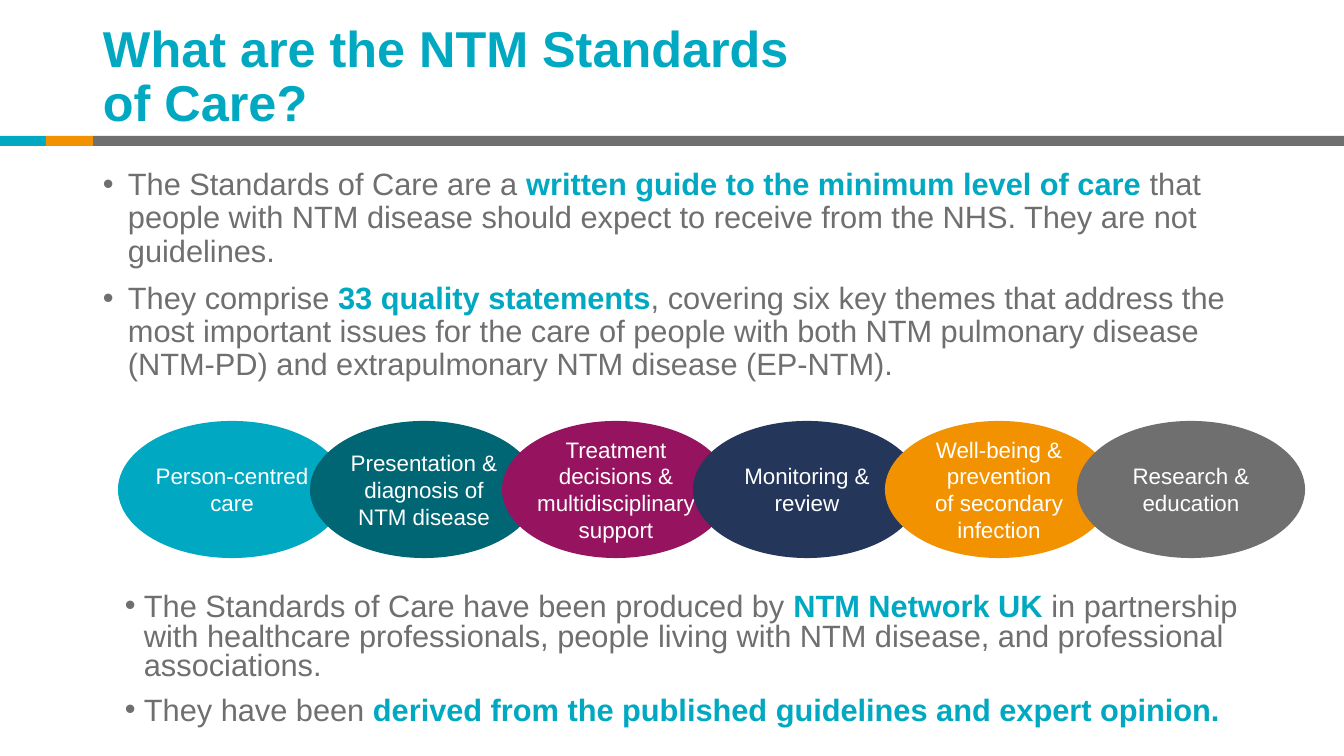
from lxml import etree
from pptx import Presentation
from pptx import util as u
from pptx.dml.color import RGBColor
from pptx.enum import shapes, text
from pptx.oxml.ns import qn

PX = 914400 / 100.8
COLORS = {
    "teal": "00A9C1", "deep": "006674", "plum": "96145F", "navy": "24375B",
    "orange": "F39200", "grey": "706F6F", "white": "FFFFFF",
}


def px(*lengths):
    return [u.Emu(round(n * PX)) for n in lengths]


def write(tf, paragraphs, size, color, bold=False, align=text.PP_ALIGN.LEFT,
          anchor=text.MSO_ANCHOR.TOP, inset=(10, 5), spacing=1.0,
          before=0, after=0, bullet=None, level=0):
    """Words between asterisks turn bold teal; \\v breaks a line."""
    tf.word_wrap = True
    tf.vertical_anchor = anchor
    tf.margin_left, tf.margin_top = tf.margin_right, tf.margin_bottom = px(*inset)
    for i, line in enumerate(paragraphs):
        p = tf.add_paragraph() if i else tf.paragraphs[0]
        p.level = level
        if bullet:
            left, hang = px(*bullet)
            pPr = p._p.get_or_add_pPr()
            pPr.set("marL", str(left))
            pPr.set("indent", str(-hang))
            etree.SubElement(pPr, qn("a:buFont")).set("typeface", "Arial")
            etree.SubElement(pPr, qn("a:buChar")).set("char", "•")
        p.alignment = align
        p.line_spacing = spacing
        p.space_before = u.Pt(before if i else 0)
        p.space_after = u.Pt(after)
        for j, part in enumerate(line.split("*")):
            strong = j % 2 == 1
            for k, words in enumerate(part.split("\v")):
                if k:
                    p.add_line_break()
                if not words:
                    continue
                r = p.add_run()
                r.text = words
                r.font.name = "Arial"
                r.font.size = u.Pt(size)
                r.font.bold = bold or strong
                r.font.color.rgb = RGBColor.from_string(
                    COLORS["teal" if strong else color])


prs = Presentation()
prs.slide_width, prs.slide_height = px(1344, 756)
s = prs.slides.add_slide(prs.slide_layouts[6])

# Three-colour rule under the title
for left, width, color in [(93, 1251, "grey"), (0, 46, "teal"), (46, 47, "orange")]:
    sp = s.shapes.add_shape(shapes.MSO_SHAPE.RECTANGLE, *px(left, 136, width, 10))
    sp.shadow.inherit = False
    sp.fill.solid()
    sp.fill.fore_color.rgb = RGBColor.from_string(COLORS[color])
    sp.line.fill.background()

# Title
title = s.shapes.add_textbox(*px(93, 28, 827, 100))
write(title.text_frame, ["What are the NTM Standards\vof Care?"], 36, "teal",
      bold=True, anchor=text.MSO_ANCHOR.MIDDLE, spacing=0.9)

# Upper bullets
body = s.shapes.add_textbox(*px(93, 164, 1200, 517))
write(body.text_frame, [
    "The Standards of Care are a *written guide to the minimum level of care *"
    "that people with NTM disease should expect to receive from the NHS. "
    "They are not guidelines.",
    "They comprise *33 quality statements*, covering six key themes that address "
    "the most important issues for the care of people with both NTM pulmonary "
    "disease (NTM-PD) and extrapulmonary NTM disease (EP-NTM).",
], 22, "grey", spacing=0.9, before=10, bullet=(25, 25))

# Six overlapping themes
themes = [
    ("teal", ["Person-centred care"]),
    ("deep", ["Presentation & diagnosis of NTM disease"]),
    ("plum", ["Treatment decisions &", "multidisciplinary support"]),
    ("navy", ["Monitoring & review"]),
    ("orange", ["Well-being & prevention", "of secondary infection"]),
    ("grey", ["Research & education"]),
]
first_left, last_left = 119, 1078
for i, (color, label) in enumerate(themes):
    left = first_left + round((last_left - first_left) * i / (len(themes) - 1))
    sp = s.shapes.add_shape(shapes.MSO_SHAPE.OVAL, *px(left, 422, 226, 135))
    sp.shadow.inherit = False
    sp.fill.solid()
    sp.fill.fore_color.rgb = RGBColor.from_string(COLORS[color])
    sp.line.color.rgb = RGBColor.from_string(COLORS[color])
    sp.line.width = u.Pt(1.5)
    write(sp.text_frame, label, 16, "white", align=text.PP_ALIGN.CENTER,
          anchor=text.MSO_ANCHOR.MIDDLE, inset=(0, 0))

# Lower bullets
origin = s.shapes.add_textbox(*px(93, 589, 1200, 152))
write(origin.text_frame, [
    "The Standards of Care have been produced by *NTM Network UK *in partnership "
    "with healthcare professionals, people living with NTM disease, and "
    "professional associations.",
    "They have been *derived from the published guidelines and expert opinion.*",
], 22, "grey", spacing=0.8, before=5, after=6, bullet=(41, 19), level=1)

prs.save("out.pptx")
